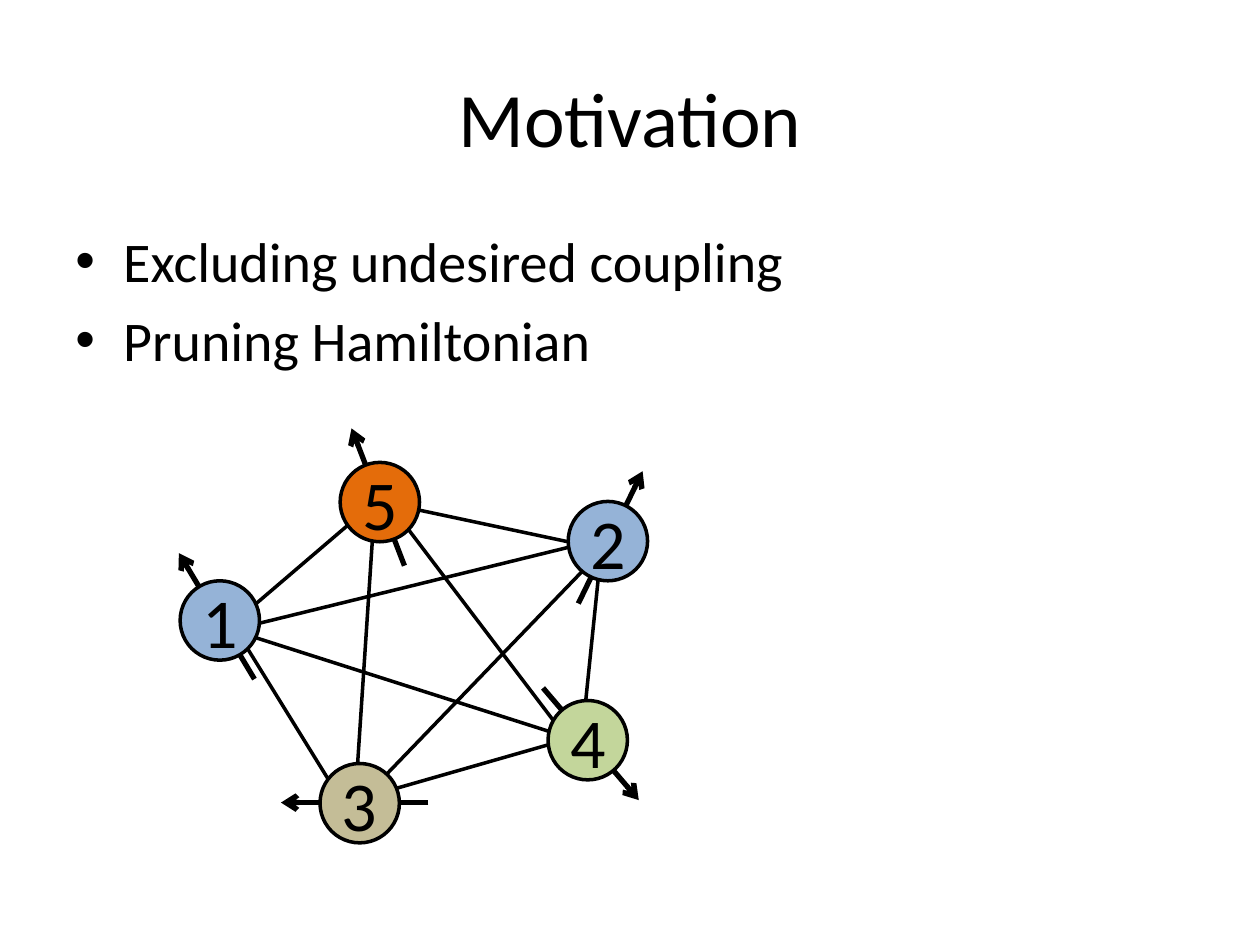
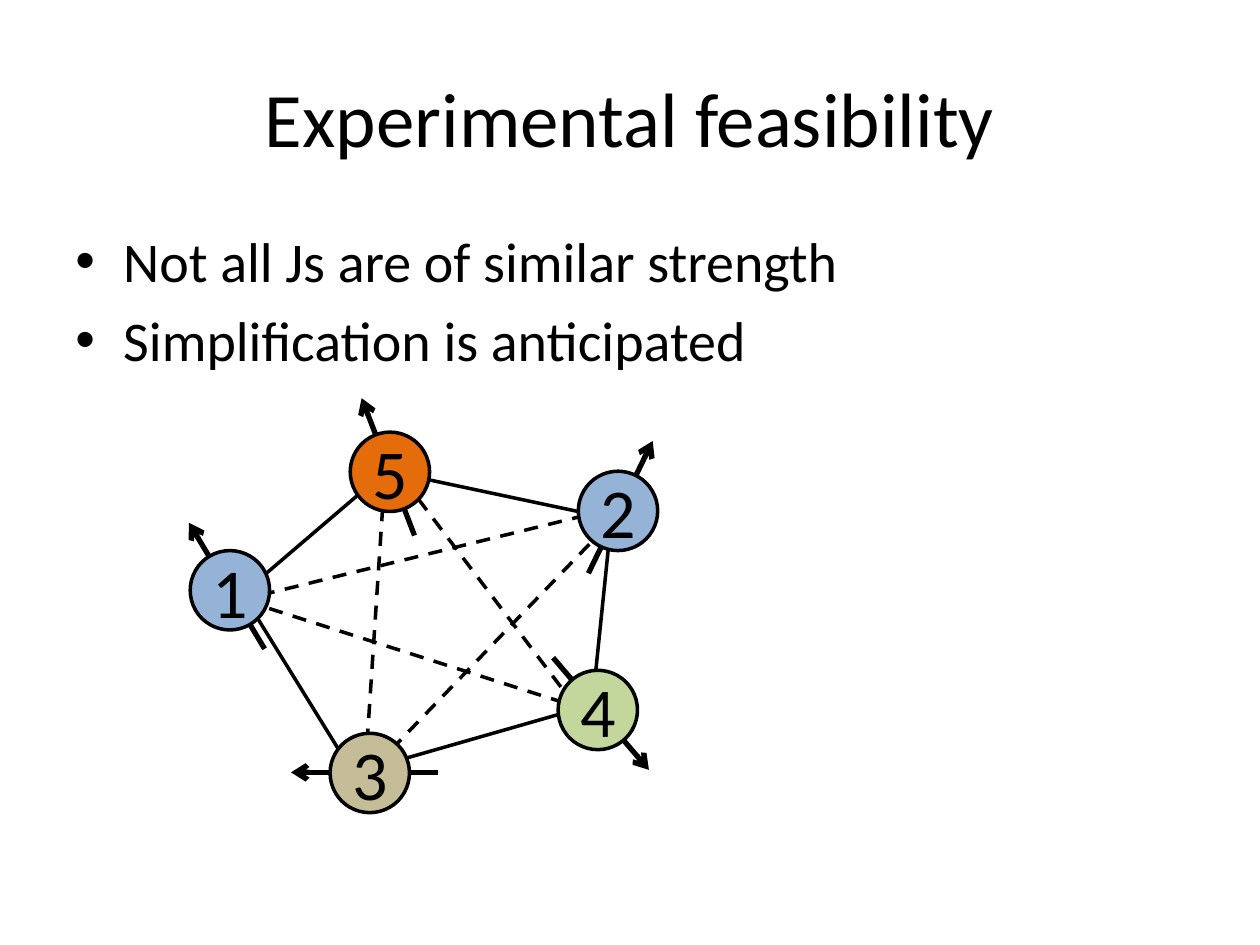
from lxml import etree
from pptx import Presentation
from pptx.dml.color import RGBColor
from pptx.enum.dml import MSO_LINE
from pptx.enum.shapes import MSO_CONNECTOR, MSO_SHAPE
from pptx.enum.text import MSO_ANCHOR, PP_ALIGN
from pptx.oxml.ns import qn
from pptx.util import Inches, Pt

COLOURS = {
    "ink": "000000",
    "blue": "95B3D7",
    "tan": "C4BD97",
    "green": "C3D69B",
    "orange": "E46C0A",
}
INK = RGBColor.from_string(COLOURS["ink"])
TITLE_FONT = {"name": "Calibri", "size": Pt(44)}
BULLET_FONT = {"name": "Calibri", "size": Pt(32)}
SPIN_FONT = {"name": "Calibri", "size": Pt(40)}
TITLE_FRAME = {"word_wrap": True, "vertical_anchor": MSO_ANCHOR.MIDDLE}
BULLET_FRAME = {"word_wrap": True, "vertical_anchor": MSO_ANCHOR.TOP}
SPIN_FRAME = {"word_wrap": True, "vertical_anchor": MSO_ANCHOR.MIDDLE,
              "margin_left": 0, "margin_right": 0,
              "margin_top": 0, "margin_bottom": 0}
DIAMETER = 0.63

# Couplings between spins: start, end, weak or not
COUPLINGS = [
    ((1.80, 5.01), (4.69, 4.30), True),
    ((1.87, 5.01), (4.53, 5.86), True),
    ((3.24, 4.20), (4.56, 5.94), True),
    ((3.05, 3.99), (4.51, 4.30), False),
    ((2.89, 6.33), (4.53, 5.86), False),
    ((1.96, 5.14), (2.80, 6.50), False),
    ((4.77, 4.38), (4.61, 5.94), False),
    ((2.89, 6.33), (4.77, 4.38), True),
    ((1.87, 4.93), (2.97, 3.99), False),
    ((2.97, 4.07), (2.81, 6.49), True),
]

# Spins: label, top left of the circle, arrow start, arrow end, colour
SPINS = [
    ("1", (1.43, 4.61), (2.02, 5.39), (1.42, 4.39), "blue"),
    ("2", (4.51, 3.98), (4.59, 4.79), (5.10, 3.74), "blue"),
    ("3", (2.54, 6.06), (3.40, 6.37), (2.23, 6.37), "tan"),
    ("4", (4.35, 5.56), (4.31, 5.46), (5.07, 6.35), "green"),
    ("5", (2.70, 3.67), (3.21, 4.49), (2.79, 3.40), "orange"),
]

# Title, bullets, shift of the spin network, weak couplings dashed or not
SLIDES = [
    ("Motivation",
     ["Excluding undesired coupling", "Pruning Hamiltonian"],
     (0, 0), False),
    ("Experimental feasibility",
     ["Not all Js are of similar strength", "Simplification is anticipated"],
     (0.08, -0.24), True),
]


def write(frame, lines, frame_format, font_format, align):
    for name, value in frame_format.items():
        setattr(frame, name, value)
    for i, line in enumerate(lines):
        paragraph = frame.paragraphs[0] if i == 0 else frame.add_paragraph()
        paragraph.alignment = align
        run = paragraph.add_run()
        run.text = line
        run.font.color.rgb = INK
        for name, value in font_format.items():
            setattr(run.font, name, value)


def draw_line(shapes, start, end, shift, width):
    ends = [Inches(c + d) for point in (start, end) for c, d in zip(point, shift)]
    line = shapes.add_connector(MSO_CONNECTOR.STRAIGHT, *ends)
    line.line.color.rgb = INK
    line.line.width = Pt(width)
    etree.SubElement(line._element.spPr, qn("a:effectLst"))
    return line


prs = Presentation()
prs.slide_width, prs.slide_height = Inches(10), Inches(7.5)

for title, bullets, shift, dashed in SLIDES:
    slide = prs.slides.add_slide(prs.slide_layouts[6])

    # Title
    heading = slide.shapes.add_textbox(Inches(0.5), Inches(0.3), Inches(9), Inches(1.25))
    write(heading.text_frame, [title], TITLE_FRAME, TITLE_FONT, PP_ALIGN.CENTER)

    # Bullets
    points = slide.shapes.add_textbox(Inches(0.5), Inches(1.75), Inches(9), Inches(4.95))
    write(points.text_frame, bullets, BULLET_FRAME, BULLET_FONT, PP_ALIGN.LEFT)
    for point in points.text_frame.paragraphs:
        point.space_before = Pt(6.4)
        properties = point._p.get_or_add_pPr()
        properties.set("marL", str(Inches(0.38)))
        properties.set("indent", str(Inches(-0.38)))
        etree.SubElement(properties, qn("a:buFont"), typeface="Arial")
        etree.SubElement(properties, qn("a:buChar"), char="•")

    # Couplings
    for start, end, weak in COUPLINGS:
        coupling = draw_line(slide.shapes, start, end, shift, 2)
        if weak and dashed:
            coupling.line.dash_style = MSO_LINE.DASH

    # Spins: an arrow behind a numbered circle
    for label, (left, top), start, end, colour in SPINS:
        spin = slide.shapes.add_group_shape()
        arrow = draw_line(spin.shapes, start, end, shift, 3)
        etree.SubElement(arrow.line._get_or_add_ln(), qn("a:tailEnd"), type="arrow")
        circle = spin.shapes.add_shape(
            MSO_SHAPE.OVAL, Inches(left + shift[0]), Inches(top + shift[1]),
            Inches(DIAMETER), Inches(DIAMETER))
        circle.shadow.inherit = False
        circle.fill.solid()
        circle.fill.fore_color.rgb = RGBColor.from_string(COLOURS[colour])
        circle.line.color.rgb = INK
        circle.line.width = Pt(2)
        write(circle.text_frame, [label], SPIN_FRAME, SPIN_FONT, PP_ALIGN.CENTER)

prs.save("out.pptx")
